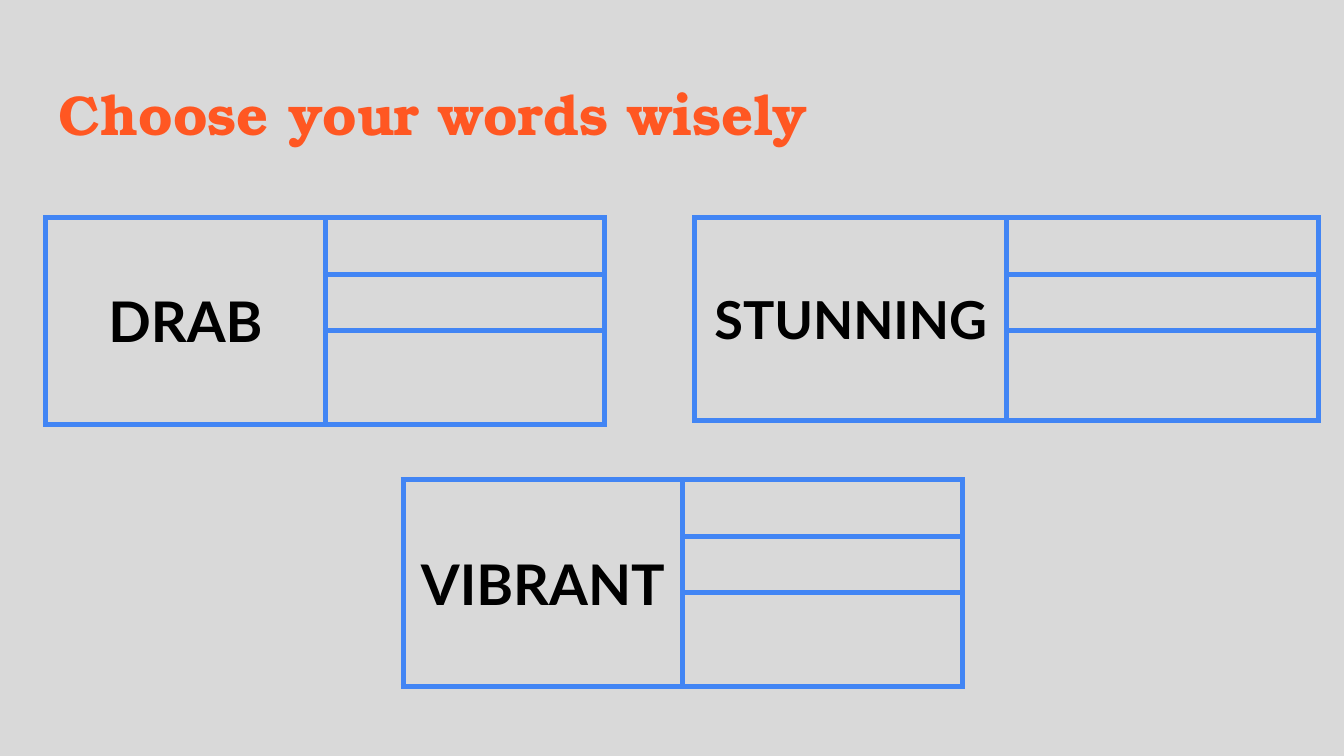
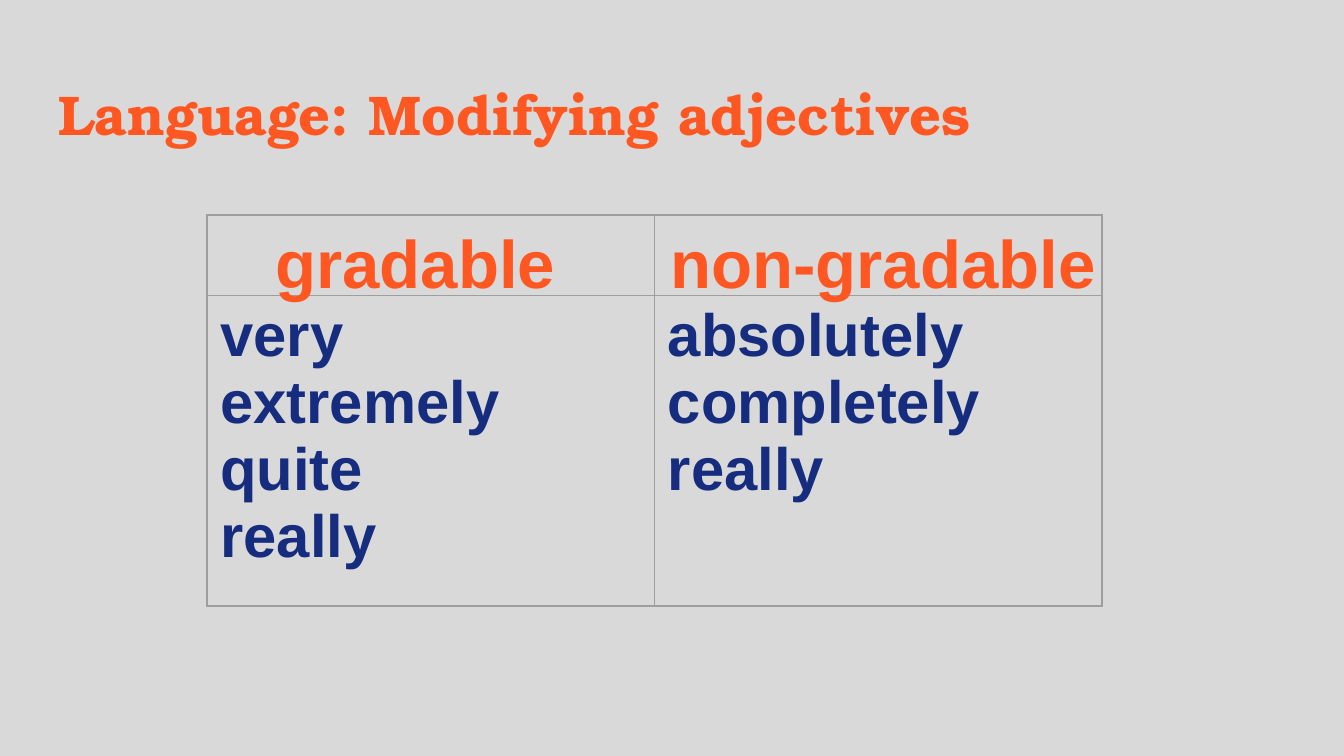
from lxml.etree import SubElement
from pptx import Presentation
from pptx.dml.color import RGBColor
from pptx.enum.text import MSO_ANCHOR as Anchor, PP_ALIGN as Align
from pptx.oxml.ns import qn
from pptx.util import Inches, Pt

GREY = RGBColor(0xD9, 0xD9, 0xD9)
ORANGE = RGBColor(0xFF, 0x57, 0x22)
BLUE = RGBColor(0x42, 0x85, 0xF4)
NAVY = RGBColor(0x15, 0x2C, 0x7F)
RULE = RGBColor(0x9E, 0x9E, 0x9E)
BLACK = RGBColor(0, 0, 0)

TITLE_FONT, LABEL_FONT, BODY_FONT = "TeX Gyre Bonum", "Lato", "Arial"
INSET = 0.1
LINE_ROW = 0.42


class Deck:
    def __init__(self):
        self.prs = Presentation()
        self.prs.slide_width = Inches(10)
        self.prs.slide_height = Inches(10) * 9 // 16

    def slide(self, title):
        self.s = self.prs.slides.add_slide(self.prs.slide_layouts[6])
        fill = self.s.background.fill
        fill.solid()
        fill.fore_color.rgb = GREY
        self.text(title, 0.34, 0.49, 9.32, 0.63, TITLE_FONT, 30, INSET, wrap=True)

    def style(self, tf, font, size, color, align=Align.LEFT):
        for p in tf.paragraphs:
            p.alignment = align
            for r in p.runs:
                r.font.name = font
                r.font.size = Pt(size)
                r.font.bold = True
                r.font.color.rgb = color

    def text(self, text, x, y, w, h, font, size, top=0.05, wrap=False):
        sp = self.s.shapes.add_textbox(Inches(x), Inches(y), Inches(w), Inches(h))
        tf = sp.text_frame
        tf.word_wrap = wrap
        tf.margin_left = tf.margin_right = Inches(INSET)
        tf.margin_top = tf.margin_bottom = Inches(top)
        tf.text = text
        self.style(tf, font, size, ORANGE)

    def border(self, cell, color, width):
        tcPr = cell._tc.get_or_add_tcPr()
        for side in ("a:lnL", "a:lnR", "a:lnT", "a:lnB"):
            ln = SubElement(tcPr, qn(side), w=str(Pt(width)))
            fill = SubElement(ln, qn("a:solidFill"))
            SubElement(fill, qn("a:srgbClr"), val=str(color))

    def table(self, x, y, col_width, heights, color, line_width):
        """Add an unfilled, ruled table of two equal columns."""
        frame = self.s.shapes.add_table(
            len(heights), 2, Inches(x), Inches(y),
            Inches(2 * col_width), Inches(sum(heights)))
        table = frame.table
        table.first_row = table.horz_banding = False
        for col in table.columns:
            col.width = Inches(col_width)
        for row, height in zip(table.rows, heights):
            row.height = Inches(height)
        for cell in table.iter_cells():
            cell.margin_top = cell.margin_bottom = 0
            self.border(cell, color, line_width)
            cell.fill.background()
        return table

    def word_box(self, word, x, y, col_width=2.08, last_row=0.7, size=30):
        """Add a word beside three empty lines to write on."""
        table = self.table(x, y, col_width, [LINE_ROW, LINE_ROW, last_row], BLUE, 3)
        cell = table.cell(0, 0)
        cell.merge(table.cell(2, 0))
        cell.margin_top = cell.margin_bottom = Inches(INSET)
        cell.vertical_anchor = Anchor.MIDDLE
        cell.text_frame.text = word
        self.style(cell.text_frame, LABEL_FONT, size, BLACK, Align.CENTER)

    def word_lists(self, x, y, col_width, heights, lists):
        table = self.table(x, y, col_width, heights, RULE, 0.75)
        for i, words in enumerate(lists):
            cell = table.cell(1, i)
            cell.margin_top = cell.margin_bottom = Inches(0.05)
            cell.text_frame.text = "\n".join(words)
            self.style(cell.text_frame, BODY_FONT, 32, NAVY)


def main():
    deck = Deck()

    deck.slide("Choose your words wisely")
    deck.word_box("VIBRANT", 3, 3.57)
    deck.word_box("DRAB", 0.34, 1.62)
    deck.word_box("STUNNING", 5.17, 1.62, col_width=2.32, last_row=0.67, size=28)

    deck.slide("Language: Modifying adjectives")
    deck.word_lists(1.54, 1.6, 3.33, [0.6, 2.31], [
        ["very", "extremely", "quite", "really"],
        ["absolutely", "completely", "really"],
    ])
    for heading, x, w in (("gradable", 1.95, 2.31), ("non-gradable", 4.89, 3.4)):
        deck.text(heading, x, 1.6, w, 0.94, BODY_FONT, 36)

    deck.prs.save("out.pptx")


if __name__ == "__main__":
    main()
